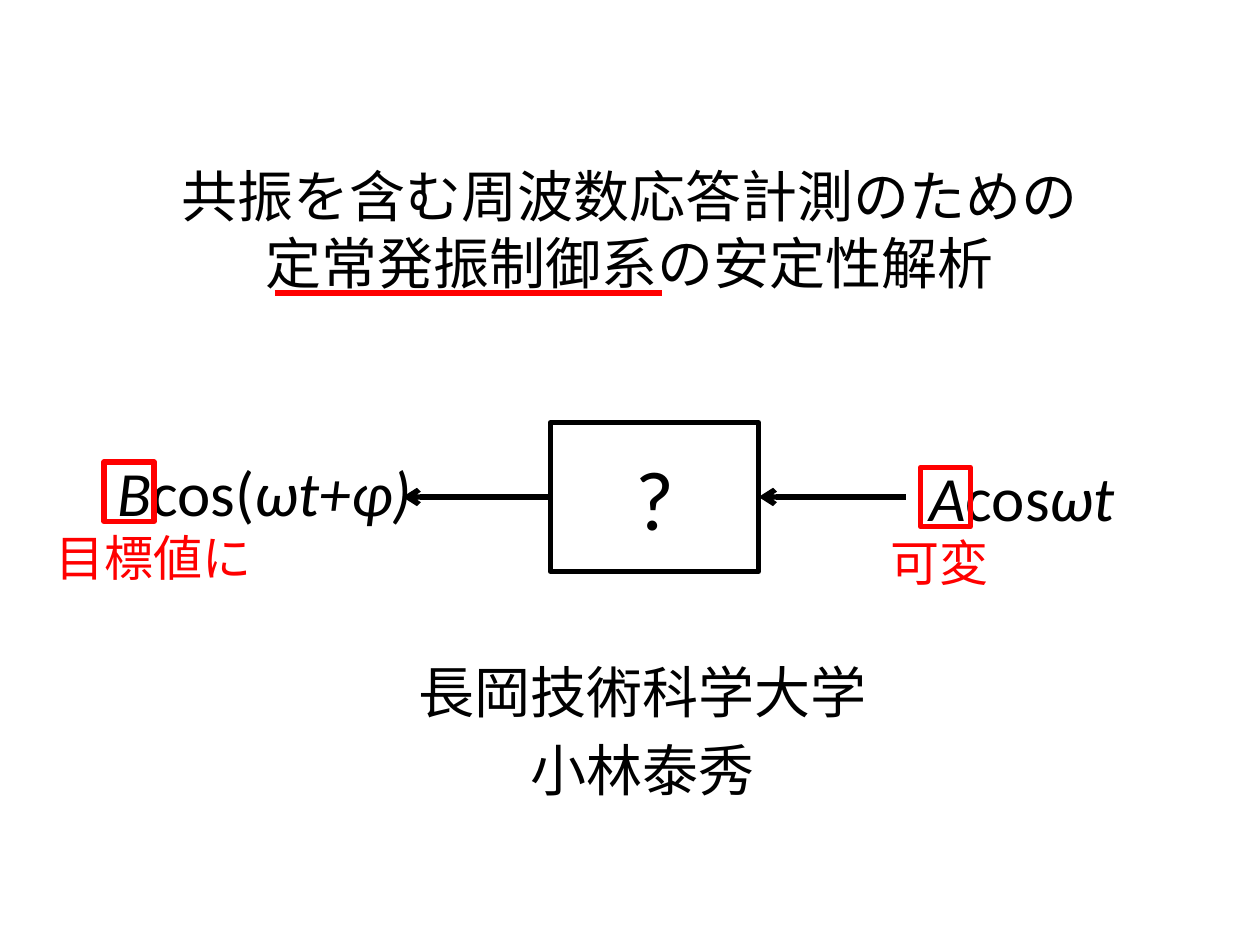
from dataclasses import dataclass

from pptx import Presentation
from pptx.dml.color import RGBColor
from pptx.enum.shapes import MSO_CONNECTOR as Connector, MSO_SHAPE as Shape
from pptx.enum.text import MSO_ANCHOR as Anchor, MSO_AUTO_SIZE as AutoSize, PP_ALIGN as Align
from pptx.oxml.ns import qn
from pptx.util import Pt
from lxml.etree import SubElement

COLORS = {"ink": "000000", "mark": "FF0000"}
FONT = "Calibri"
LINE_WIDTH = 3
BREAK = "\n"


@dataclass(frozen=True)
class Frame:
    left: float
    top: float
    width: float
    height: float


@dataclass(frozen=True)
class Span:
    text: str
    italic: bool = False


@dataclass(frozen=True)
class Label:
    frame: Frame
    paras: tuple[tuple[Span, ...], ...]
    size: float
    color: str = "ink"
    align: Align = Align.LEFT
    anchor: Anchor = Anchor.TOP
    wrap: bool = False
    space_before: float = 0


@dataclass(frozen=True)
class Arrow:
    tip_x: float
    tail_x: float


TITLE = Label(
    Frame(0, 71.5, 720, 118.5),
    ((Span("共振を含む周波数応答計測のための"), Span(BREAK), Span("定常発振制御系の安定性解析")),),
    32, align=Align.CENTER, anchor=Anchor.MIDDLE, wrap=True,
)
AUTHOR = Label(
    Frame(31, 372, 672, 138),
    ((Span("長岡技術科学大学"),), (Span("小林泰秀"),)),
    32, align=Align.CENTER, wrap=True, space_before=6.4,
)
INPUT = Label(
    Frame(524, 258.5, 122, 51),
    ((Span("A", True), Span("cos"), Span("ωt", True)),), 36,
)
OUTPUT = Label(
    Frame(60, 255.5, 184, 51),
    ((Span("B", True), Span("cos("), Span("ωt+φ)", True)),), 36,
)
TARGET = Label(Frame(24.5, 298, 126, 41), ((Span("目標値に"),),), 28, "mark")
VARIABLE = Label(Frame(502, 300.5, 71, 41), ((Span("可変"),),), 28, "mark")
LABELS = (TITLE, AUTHOR, INPUT, OUTPUT, TARGET, VARIABLE)

SYSTEM_FRAME = Frame(314.5, 241.5, 119, 85)
SYSTEM = Label(SYSTEM_FRAME, ((Span("?"),),), 48, align=Align.CENTER, anchor=Anchor.MIDDLE, wrap=True)
SYSTEM_RIGHT = SYSTEM_FRAME.left + SYSTEM_FRAME.width
SYSTEM_MIDDLE = SYSTEM_FRAME.top + SYSTEM_FRAME.height / 2
INPUT_ARROW = Arrow(SYSTEM_RIGHT, 518)
OUTPUT_ARROW = Arrow(230, SYSTEM_FRAME.left)
AMPLITUDES = (Frame(59.5, 264, 28.5, 34), Frame(526, 267, 28.5, 34))


def apply(target, values: dict) -> None:
    """Set each named attribute of the target."""
    for name, value in values.items():
        setattr(target, name, value)


def lengths(frame: Frame) -> tuple:
    """Return the frame as lengths in points."""
    return tuple(Pt(value) for value in (frame.left, frame.top, frame.width, frame.height))


def paint_line(line, color: str) -> None:
    """Give a line its colour and the common width."""
    line.color.rgb = RGBColor.from_string(COLORS[color])
    line.width = Pt(LINE_WIDTH)


def write(text_frame, label: Label) -> None:
    """Fill a text frame with the paragraphs of a label."""
    apply(text_frame, {
        "word_wrap": label.wrap,
        "auto_size": AutoSize.NONE if label.wrap else AutoSize.SHAPE_TO_FIT_TEXT,
        "vertical_anchor": label.anchor,
    })
    for index, spans in enumerate(label.paras):
        para = text_frame.add_paragraph() if index else text_frame.paragraphs[0]
        apply(para, {"alignment": label.align, "space_before": Pt(label.space_before)})
        for span in spans:
            if span.text == BREAK:
                para.add_line_break()
                continue
            run = para.add_run()
            run.text = span.text
            apply(run.font, {"name": FONT, "size": Pt(label.size), "italic": span.italic})
            run.font.color.rgb = RGBColor.from_string(COLORS[label.color])


def add_label(page, label: Label) -> None:
    """Add a text box."""
    write(page.shapes.add_textbox(*lengths(label.frame)).text_frame, label)


def add_box(page, frame: Frame, color: str):
    """Add an unfilled outlined rectangle."""
    box = page.shapes.add_shape(Shape.RECTANGLE, *lengths(frame))
    box.shadow.inherit = False
    box.fill.background()
    paint_line(box.line, color)
    return box


def add_line(page, start_x: float, end_x: float, y: float, color: str):
    """Add a horizontal line without a shadow."""
    line = page.shapes.add_connector(Connector.STRAIGHT, Pt(start_x), Pt(y), Pt(end_x), Pt(y))
    paint_line(line.line, color)
    SubElement(line._element.spPr, qn("a:effectLst"))
    return line


def add_arrow(page, arrow: Arrow):
    """Add an arrow at the system's middle, pointing at its start."""
    line = add_line(page, arrow.tip_x, arrow.tail_x, SYSTEM_MIDDLE, "ink")
    SubElement(line.line._get_or_add_ln(), qn("a:headEnd"), type="arrow")
    return line


def main() -> None:
    """Build and save the slide."""
    deck = Presentation()
    apply(deck, {"slide_width": Pt(720), "slide_height": Pt(540)})
    page = deck.slides.add_slide(deck.slide_layouts[6])
    system = add_box(page, SYSTEM_FRAME, "ink")
    write(system.text_frame, SYSTEM)
    add_arrow(page, INPUT_ARROW).begin_connect(system, 3)
    add_arrow(page, OUTPUT_ARROW).end_connect(system, 1)
    for label in LABELS:
        add_label(page, label)
    for frame in AMPLITUDES:
        add_box(page, frame, "mark")
    add_line(page, 157, 378, 167.5, "mark")
    deck.save("out.pptx")


if __name__ == "__main__":
    main()
